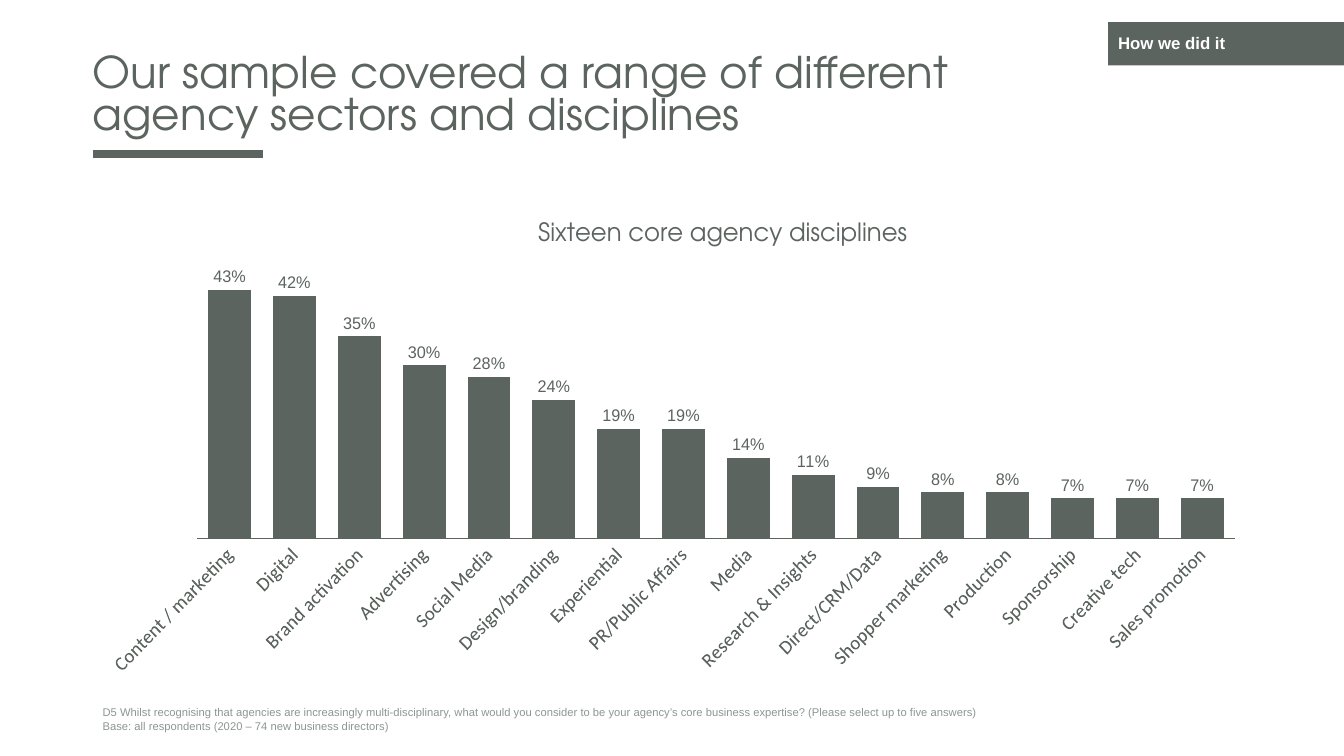
from lxml.etree import SubElement
from pptx import Presentation
from pptx.chart.data import CategoryChartData
from pptx.dml.color import RGBColor
from pptx.enum.chart import XL_CHART_TYPE as ChartType, XL_LABEL_POSITION as LabelPosition, XL_TICK_MARK as TickMark
from pptx.enum.shapes import MSO_CONNECTOR as Connector, MSO_SHAPE as Shape
from pptx.enum.text import MSO_ANCHOR as Anchor, PP_ALIGN as Align
from pptx.oxml.ns import qn
from pptx.util import Inches, Pt

SLATE = RGBColor(0x5B, 0x64, 0x5F)
GREY = RGBColor(0x8D, 0x96, 0x91)
WHITE = RGBColor(0xFF, 0xFF, 0xFF)
HEADING_FONT = "TeX Gyre Adventor"


def style_font(font, name, size, color, bold=False):
    for key, value in {"name": name, "size": Pt(size), "bold": bold}.items():
        setattr(font, key, value)
    font.color.rgb = color


def place(parent, position, **sizes):
    layout = parent.find(qn("c:layout"))
    if layout is None:
        layout = SubElement(parent, qn("c:layout"))
    parent.insert(1 if parent.find(qn("c:tx")) is not None else 0, layout)
    manual = SubElement(layout, qn("c:manualLayout"))
    settings = {"xMode": "edge", "yMode": "edge", "x": position[0], "y": position[1], **sizes}
    if sizes:
        settings = {"layoutTarget": "inner", **settings}
    for tag, value in settings.items():
        SubElement(manual, qn(f"c:{tag}")).set("val", str(value))


deck = Presentation()
deck.slide_width, deck.slide_height = Inches(13.33), Inches(7.5)
page = deck.slides.add_slide(deck.slide_layouts[6])

rule = page.shapes.add_connector(Connector.STRAIGHT, Inches(0.92), Inches(1.53), Inches(2.61), Inches(1.53))
rule.line.color.rgb = SLATE
rule.line.width = Pt(6)
SubElement(rule._element.spPr, qn("a:effectLst"))

tag = page.shapes.add_shape(Shape.RECTANGLE, Inches(10.99), Inches(0.22), Inches(2.35), Inches(0.43))
tag.shadow.inherit = False
tag.fill.solid()
tag.fill.fore_color.rgb = SLATE
tag.line.fill.background()
heading = page.shapes.add_textbox(Inches(0.92), Inches(0.4), Inches(9.64), Inches(1.03))
footnote = page.shapes.add_textbox(Inches(0.92), Inches(6.95), Inches(11.5), Inches(0.37))

texts = [
    (tag, ["How we did it"], ("Arial", 12, WHITE, True), Anchor.MIDDLE, 0.1, 0.9),
    (heading, ["Our sample covered a range of different agency sectors and disciplines"],
     (HEADING_FONT, 31.2, SLATE), Anchor.BOTTOM, 0, 0.8),
    (footnote, ["D5 Whilst recognising that agencies are increasingly multi-disciplinary, what would you consider "
                "to be your agency’s core business expertise? (Please select up to five answers)",
                "Base: all respondents (2020 – 74 new business directors)"],
     ("Arial", 8, GREY), Anchor.TOP, 0.1, 1.0),
]
for box, lines, look, anchor, inset, spacing in texts:
    frame = box.text_frame
    frame_format = {"word_wrap": True, "vertical_anchor": anchor,
                    "margin_left": Inches(inset), "margin_right": Inches(inset)}
    for key, value in frame_format.items():
        setattr(frame, key, value)
    for index, line in enumerate(lines):
        para = frame.add_paragraph() if index else frame.paragraphs[0]
        para.alignment = Align.LEFT
        para.line_spacing = spacing
        span = para.add_run()
        span.text = line
        style_font(span.font, *look)

disciplines = {
    "Content / marketing": 0.43, "Digital": 0.42, "Brand activation": 0.35, "Advertising": 0.3,
    "Social Media": 0.28, "Design/branding": 0.24, "Experiential": 0.19, "PR/Public Affairs": 0.19,
    "Media": 0.14, "Research & Insights": 0.11, "Direct/CRM/Data": 0.09, "Shopper marketing": 0.08,
    "Production": 0.08, "Sponsorship": 0.07, "Creative tech": 0.07, "Sales promotion": 0.07,
}
data = CategoryChartData(number_format="0%")
data.categories = list(disciplines)
data.add_series("Series 1", list(disciplines.values()))
chart = page.shapes.add_chart(ChartType.COLUMN_CLUSTERED, Inches(1.08), Inches(1.98),
                              Inches(11.33), Inches(4.97), data).chart
style_font(chart.font, "Calibri", 10, SLATE)
chart.has_legend = False

chart.has_title = True
span = chart.chart_title.text_frame.paragraphs[0].add_run()
span.text = "Sixteen core agency disciplines"
style_font(span.font, HEADING_FONT, 18, SLATE)
chart_xml = chart.element
place(chart_xml.find(".//" + qn("c:title")), (0.35, 0.03))
place(chart_xml.find(".//" + qn("c:plotArea")), (0.045, 0.1), w=0.94, h=0.577)

plot = chart.plots[0]
for key, value in {"gap_width": 51, "overlap": -27, "vary_by_categories": False, "has_data_labels": True}.items():
    setattr(plot, key, value)
bars = plot.series[0].format.fill
bars.solid()
bars.fore_color.rgb = SLATE
labels = plot.data_labels
label_format = {"show_value": True, "position": LabelPosition.OUTSIDE_END,
                "number_format": "0%", "number_format_is_linked": False}
for key, value in label_format.items():
    setattr(labels, key, value)
style_font(labels.font, "Arial", 12, SLATE)

names = chart.category_axis
names.major_tick_mark = names.minor_tick_mark = TickMark.NONE
names.format.line.color.rgb = SLATE
names.format.line.width = Pt(0.75)
style_font(names.tick_labels.font, "Calibri", 14, SLATE)
names_text = chart_xml.find(".//" + qn("c:catAx")).find(qn("c:txPr"))
names_text.find(qn("a:bodyPr")).set("rot", "-2700000")

shares = chart.value_axis
share_format = {"visible": False, "has_major_gridlines": False, "minimum_scale": 0, "maximum_scale": 0.5}
for key, value in share_format.items():
    setattr(shares, key, value)
shares.tick_labels.number_format = "0%"
shares.tick_labels.number_format_is_linked = False

deck.save("out.pptx")
